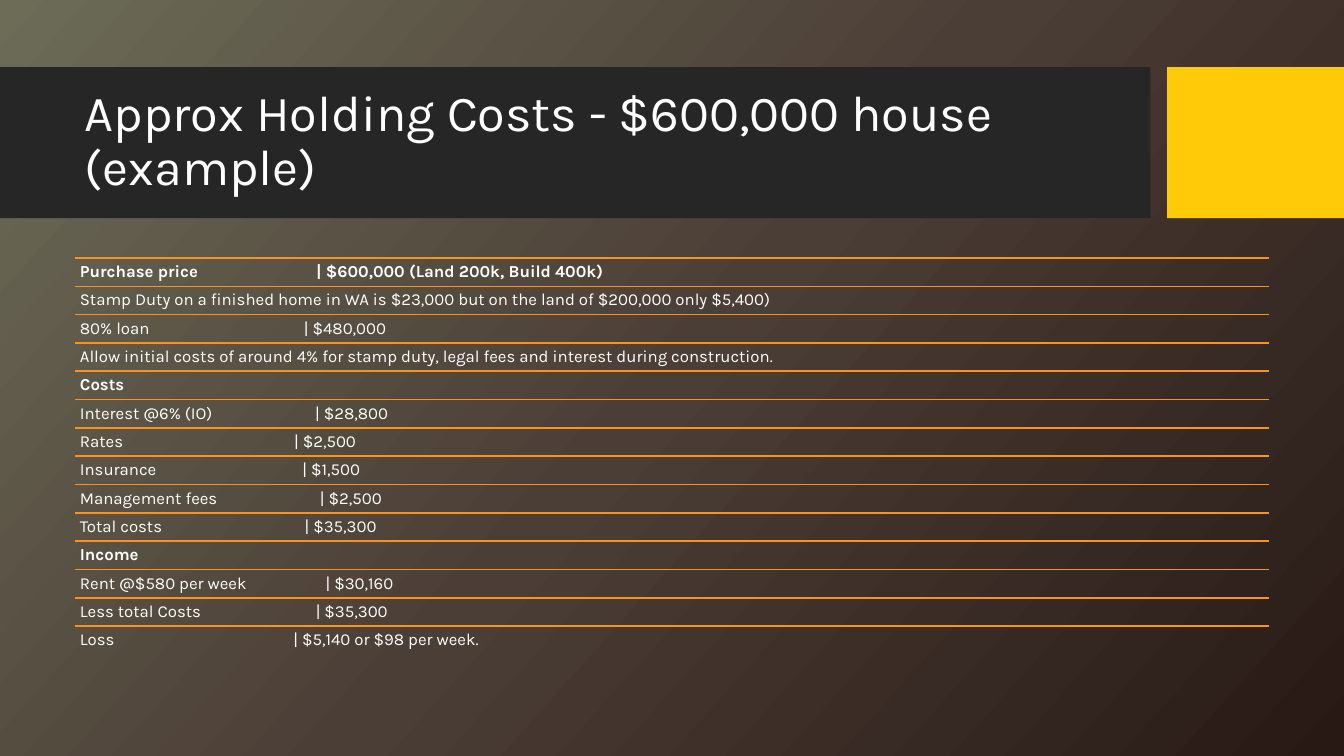
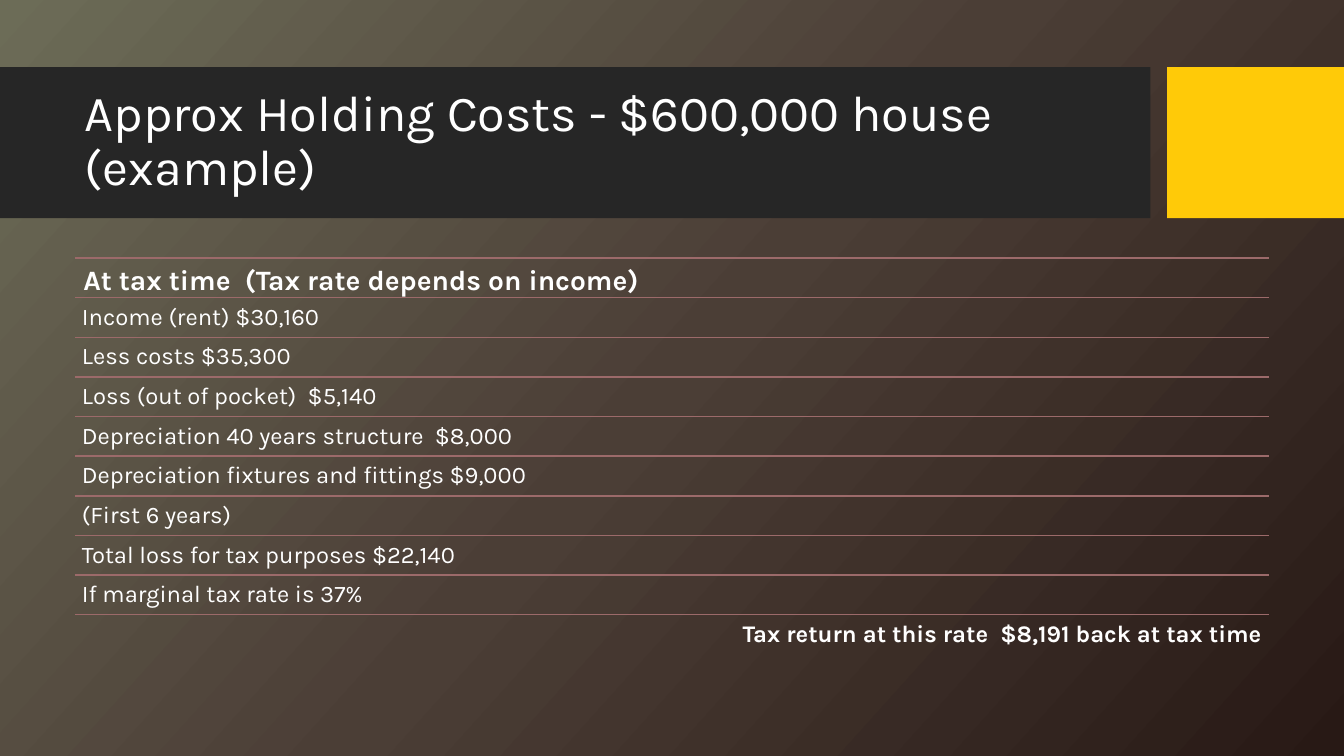
from copy import deepcopy

from lxml import etree
from pptx import Presentation
from pptx.dml.color import RGBColor
from pptx.enum.shapes import MSO_CONNECTOR, MSO_SHAPE
from pptx.enum.text import MSO_ANCHOR, PP_ALIGN
from pptx.oxml.ns import qn
from pptx.util import Pt

RECTANGLE = MSO_SHAPE.RECTANGLE
STRAIGHT = MSO_CONNECTOR.STRAIGHT
MIDDLE = MSO_ANCHOR.MIDDLE
LEFT, RIGHT = PP_ALIGN.LEFT, PP_ALIGN.RIGHT

COLORS = {
    "olive": "6C6C57",
    "brown": "4B3E36",
    "umber": "281915",
    "band": "262626",
    "accent": "FFCA08",
    "orange": "F8931D",
    "rose": "9C6A6A",
    "text": "FFFFFF",
}
FONT = "Karla"
WIDTH, HEIGHT = 960, 540
TITLE_ONLY = 5
TITLE_BOX = (53.5, 59, 756.5, 85)
LIST_BOX = (53.5, 184.2, 853, 283.3)
BANDS = [((0, 48, 821.8, 107.8), "band"), ((833.6, 48, 126.4, 107.8), "accent")]
TITLE = "Approx Holding Costs - $600,000 house (example)"

HOLDING_COSTS = [
    {"text": "Purchase price\t| $600,000 (Land 200k, Build 400k)", "tab": 169, "bold": True},
    {"text": "Stamp Duty on a finished home in WA is $23,000 but on the land of $200,000 only $5,400)"},
    {"text": "80% loan\t| $480,000", "tab": 160},
    {"text": "Allow initial costs of around 4% for stamp duty, legal fees and interest during construction."},
    {"text": "Costs", "bold": True},
    {"text": "Interest @6% (IO)\t| $28,800", "tab": 168},
    {"text": "Rates\t| $2,500", "tab": 153},
    {"text": "Insurance\t| $1,500", "tab": 159},
    {"text": "Management fees\t| $2,500", "tab": 171.5},
    {"text": "Total costs\t| $35,300", "tab": 160.5},
    {"text": "Income", "bold": True},
    {"text": "Rent @$580 per week\t| $30,160", "tab": 175.5},
    {"text": "Less total Costs\t| $35,300", "tab": 168.5},
    {"text": "Loss\t| $5,140 or $98 per week.", "tab": 152.5},
]
TAX_TIME = [
    {"text": "At tax time  (Tax rate depends on income)", "size": 20, "bold": True},
    {"text": "Income (rent) $30,160"},
    {"text": "Less costs $35,300"},
    {"text": "Loss (out of pocket)  $5,140"},
    {"text": "Depreciation 40 years structure  $8,000"},
    {"text": "Depreciation fixtures and fittings $9,000"},
    {"text": "(First 6 years)"},
    {"text": "Total loss for tax purposes $22,140"},
    {"text": "If marginal tax rate is 37%"},
    {"text": "Tax return at this rate  $8,191 back at tax time", "bold": True, "align": RIGHT},
]


def rgb(name):
    """Return the named palette colour."""
    return RGBColor.from_string(COLORS[name])


def points(box):
    """Convert a sequence of numbers to point lengths."""
    return [Pt(value) for value in box]


def write(frame, text, size=12, bold=False, align=LEFT, tab=None):
    """Write one formatted paragraph, with an optional tab stop."""
    paragraph = frame.paragraphs[0]
    paragraph.text = text
    if tab is not None:
        properties = paragraph._p.get_or_add_pPr()
        stops = etree.SubElement(properties, qn("a:tabLst"))
        etree.SubElement(stops, qn("a:tab"), pos=str(Pt(tab)), algn="l")
    paragraph.alignment = align
    paragraph.line_spacing = 0.9
    font = paragraph.runs[0].font
    font.name, font.size, font.bold = FONT, Pt(size), bold
    font.color.rgb = rgb("text")


def style_background(master):
    """Give the master a diagonal three-colour gradient."""
    fill = master.background.fill
    fill.gradient()
    fill.gradient_angle = 318
    stops = master.element.find(".//" + qn("a:gsLst"))
    for extra in stops[1:]:
        stops.remove(extra)
    for _ in range(2):
        stops.append(deepcopy(stops[0]))
    for stop, name, position in zip(fill.gradient_stops, ("olive", "brown", "umber"), (0, 0.5, 1)):
        stop.color.rgb = rgb(name)
        stop.position = position


def style_layout(layout, slide):
    """Place the title and move the two header bands into the layout."""
    title = next(iter(layout.placeholders))
    title.left, title.top, title.width, title.height = points(TITLE_BOX)
    title.text_frame.vertical_anchor = MIDDLE
    for index, (box, color) in enumerate(BANDS):
        band = slide.shapes.add_shape(RECTANGLE, *points(box))
        band.shadow.inherit = False
        band.fill.solid()
        band.fill.fore_color.rgb = rgb(color)
        band.line.fill.background()
        band.element.nvSpPr.cNvPr.set("id", str(100 + index))
        layout.shapes.element.insert(2 + index, band.element)


def add_rule(slide, left, top, width, color):
    """Draw a thin horizontal rule."""
    rule = slide.shapes.add_connector(STRAIGHT, *points((left, top, left + width, top)))
    rule.line.color.rgb = rgb(color)
    rule.line.width = Pt(1)
    etree.SubElement(rule.element.spPr, qn("a:effectLst"))


def add_ruled_list(slide, box, rows, size, color):
    """Divide a box into equal rows, each topped by a rule."""
    left, top, width, height = box
    pitch = height / len(rows)
    for index, row in enumerate(rows):
        row_top = top + index * pitch
        add_rule(slide, left, row_top, width, color)
        text_box = slide.shapes.add_textbox(*points((left, row_top, width, pitch)))
        frame = text_box.text_frame
        frame.word_wrap = True
        row_format = {"size": size, **row}
        inset = Pt(row_format["size"] * 0.3)
        frame.margin_left = frame.margin_right = inset
        frame.margin_top = frame.margin_bottom = inset
        write(frame, **row_format)


def fill_slide(slide, rows, size, color):
    """Fill in the title and the ruled list."""
    write(slide.shapes.title.text_frame, TITLE, size=36)
    add_ruled_list(slide, LIST_BOX, rows, size, color)


def main():
    """Build and save the presentation."""
    presentation = Presentation()
    presentation.slide_width, presentation.slide_height = Pt(WIDTH), Pt(HEIGHT)
    layout = presentation.slide_layouts[TITLE_ONLY]
    slides = [presentation.slides.add_slide(layout) for _ in range(2)]
    style_background(presentation.slide_master)
    style_layout(layout, slides[0])
    fill_slide(slides[0], HOLDING_COSTS, 12, "orange")
    fill_slide(slides[1], TAX_TIME, 17, "rose")
    presentation.save("out.pptx")


if __name__ == "__main__":
    main()
